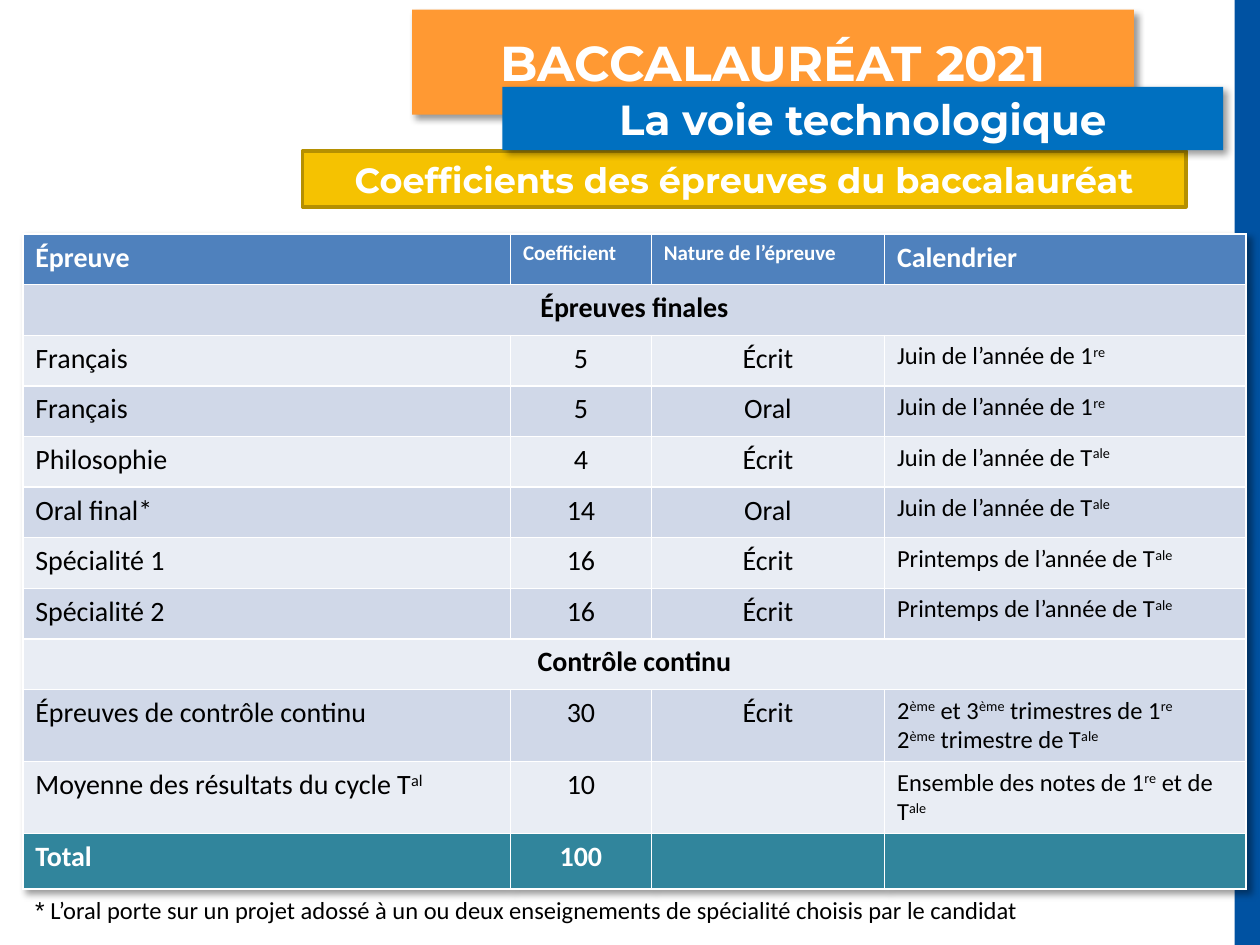
from lxml.etree import fromstring
from pptx import Presentation
from pptx.dml.color import RGBColor
from pptx.enum.shapes import MSO_SHAPE as Shape
from pptx.enum.text import MSO_ANCHOR as Anchor, MSO_AUTO_SIZE as AutoSize, PP_ALIGN as Align
from pptx.util import Cm, Pt

WHITE = RGBColor(0xFF, 0xFF, 0xFF)
BLACK = RGBColor(0, 0, 0)
NAVY = RGBColor(0x00, 0x52, 0xA2)
ORANGE = RGBColor(0xFF, 0x99, 0x33)
BLUE = RGBColor(0x00, 0x70, 0xC0)
YELLOW = RGBColor(0xF5, 0xC2, 0x01)
OCHRE = RGBColor(0xB5, 0x90, 0x01)
HEADER = RGBColor(0x4F, 0x81, 0xBD)
BANDS = (RGBColor(0xE9, 0xED, 0xF4), RGBColor(0xD0, 0xD8, 0xE8))
TEAL = RGBColor(0x31, 0x85, 0x9C)

SHADOW = (
    '<a:effectLst xmlns:a="http://schemas.openxmlformats.org/drawingml/2006/main">'
    '<a:outerShdw blurRad="50800" dist="38100" dir="2700000" algn="tl" rotWithShape="0">'
    '<a:srgbClr val="000000"><a:alpha val="40000"/></a:srgbClr></a:outerShdw></a:effectLst>'
)

COLUMNS = (9.83, 2.84, 4.7, 7.29)
ROW, TALL_ROW = 1.02, 1.45
ROWS = (
    ("Épreuve", "Coefficient", "Nature de l’épreuve", "Calendrier"),
    ("Épreuves finales",),
    ("Français", "5", "Écrit", "Juin de l’année de 1^re^"),
    ("Français", "5", "Oral", "Juin de l’année de 1^re^"),
    ("Philosophie", "4", "Écrit", "Juin de l’année de T^ale^"),
    ("Oral final*", "14", "Oral", "Juin de l’année de T^ale^"),
    ("Spécialité 1", "16", "Écrit", "Printemps de l’année de T^ale^"),
    ("Spécialité 2", "16", "Écrit", "Printemps de l’année de T^ale^"),
    ("Contrôle continu",),
    ("Épreuves de contrôle continu", "30", "Écrit",
     "2^ème^ et 3^ème^ trimestres de 1^re^\n2^ème^ trimestre de T^ale^"),
    ("Moyenne des résultats du cycle T^al^", "10", "",
     "Ensemble des notes de 1^re^ et de T^ale^"),
    ("Total", "100", "", ""),
)


def add_text(para, text, size=16, font="Calibri", color=BLACK, bold=False, align=Align.LEFT):
    """Add formatted text to a paragraph, raising the parts between carets."""
    para.alignment = align
    for index, part in enumerate(text.split("^")):
        if not part:
            continue
        span = para.add_run()
        span.text = part
        span.font.size, span.font.name = Pt(size), font
        span.font.bold, span.font.color.rgb = bold, color
        if index % 2:
            span._r.get_or_add_rPr().set("baseline", "30000")


def style_banner(box, text, place, fill, size, line=None):
    """Place, fill and letter one banner; those without a line cast a shadow."""
    box.left, box.top, box.width, box.height = map(Cm, place)
    box.fill.solid()
    box.fill.fore_color.rgb = fill
    if line is None:
        box.line.fill.background()
        box._element.spPr.append(fromstring(SHADOW))
    else:
        box.line.color.rgb, box.line.width = line, Pt(2)
        box.shadow.inherit = False
    frame = box.text_frame
    frame.word_wrap, frame.auto_size = True, AutoSize.SHAPE_TO_FIT_TEXT
    frame.vertical_anchor = Anchor.MIDDLE
    add_text(frame.paragraphs[0], text, size=size, font="Montserrat",
             color=WHITE, bold=True, align=Align.CENTER)


def add_side_bar(page):
    """Draw the bar along the right edge."""
    bar = page.shapes.add_shape(Shape.RECTANGLE, Cm(24.89), 0, Cm(0.51), Cm(19.05))
    bar.fill.solid()
    bar.fill.fore_color.rgb = NAVY
    bar.line.fill.background()
    bar.shadow.inherit = False


def fill_cell(cell, text, fill, **style):
    """Fill one cell and write its lines."""
    cell.fill.solid()
    cell.fill.fore_color.rgb = fill
    for index, line in enumerate(text.split("\n")):
        frame = cell.text_frame
        para = frame.add_paragraph() if index else frame.paragraphs[0]
        add_text(para, line, **style)


def add_coefficients(page):
    """Build the table of coefficients."""
    holder = page.shapes.add_table(len(ROWS), len(COLUMNS), Cm(0.46), Cm(4.72),
                                   Cm(sum(COLUMNS)), Cm(13.13))
    table = holder.table
    table._tbl.tblPr.insert(0, fromstring(SHADOW))
    for column, width in zip(table.columns, COLUMNS):
        column.width = Cm(width)
    last = len(ROWS) - 1
    for number, texts in enumerate(ROWS):
        header, total, section = number == 0, number == last, len(texts) == 1
        fill = HEADER if header else TEAL if total else BANDS[number % 2]
        table.rows[number].height = Cm(TALL_ROW if number in (9, 10) else 1.12 if total else ROW)
        if section:
            table.cell(number, 0).merge(table.cell(number, len(COLUMNS) - 1))
        for column, text in enumerate(texts):
            middle = column in (1, 2)
            size = 12 if header and middle else 14 if column == 3 and not header else 16
            centred = section or (middle and not header)
            fill_cell(table.cell(number, column), text, fill, size=size,
                      color=WHITE if header or total else BLACK,
                      bold=header or total or section,
                      align=Align.CENTER if centred else Align.LEFT)


def add_footnote(page):
    """Write the note under the table."""
    box = page.shapes.add_textbox(Cm(0.46), Cm(17.91), Cm(20.62), Cm(0.86))
    box.text_frame.word_wrap = False
    box.text_frame.auto_size = AutoSize.SHAPE_TO_FIT_TEXT
    para = box.text_frame.paragraphs[0]
    add_text(para, "*", size=14, font="Arial")
    add_text(para, " L’oral porte sur un projet adossé à un ou deux enseignements "
                   "de spécialité choisis par le candidat", size=14)


def main():
    """Build and save the slide."""
    deck = Presentation()
    deck.slide_width, deck.slide_height = Cm(25.4), Cm(19.05)
    page = deck.slides.add_slide(deck.slide_layouts[5])
    add_side_bar(page)
    style_banner(page.shapes.title, "BACCALAURÉAT 2021", (8.31, 0.53, 14.55, 1.45), ORANGE, 28)
    for text, place, fill, size, line in (
        ("Coefficients des épreuves du baccalauréat", (6.1, 3.05, 17.81, 1.12), YELLOW, 20, OCHRE),
        ("La voie technologique", (10.13, 1.75, 14.53, 1.28), BLUE, 24, None),
    ):
        banner = page.shapes.add_shape(Shape.RECTANGLE, *map(Cm, place))
        style_banner(banner, text, place, fill, size, line)
    add_coefficients(page)
    add_footnote(page)
    deck.save("out.pptx")


if __name__ == "__main__":
    main()
